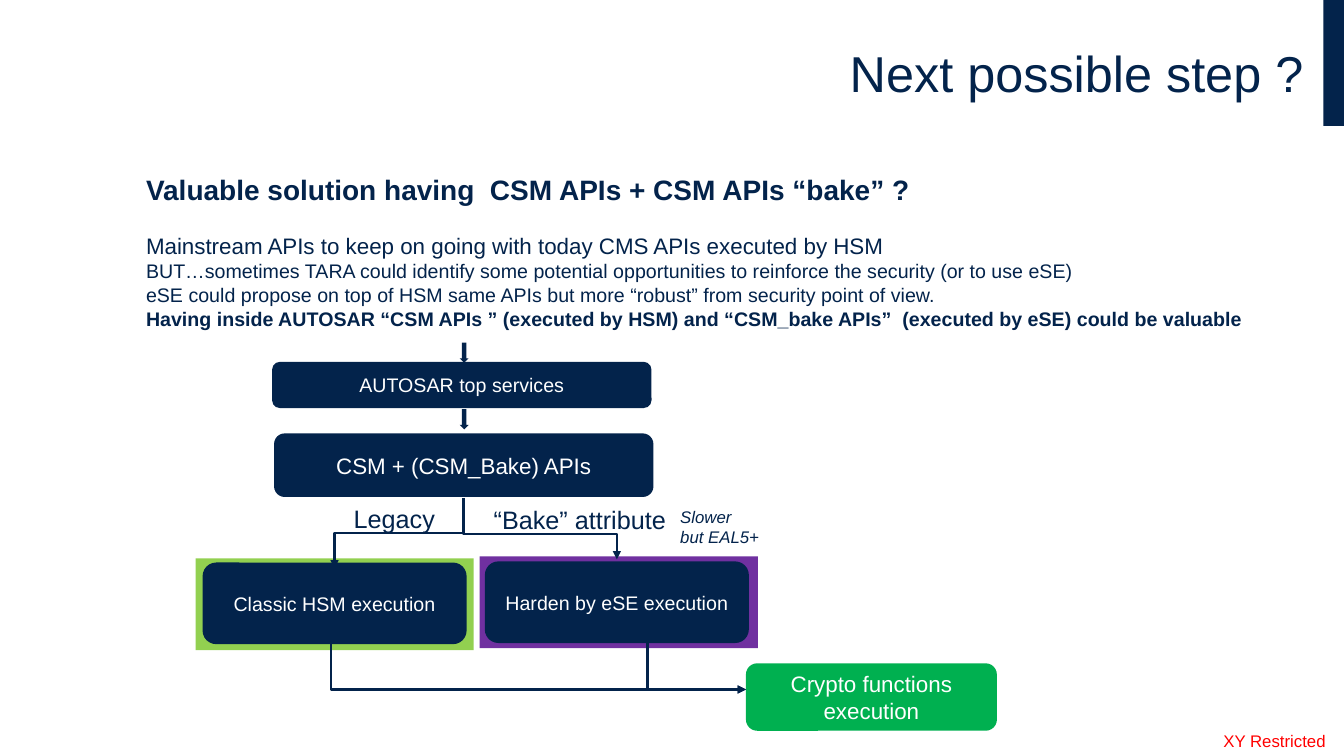
from pptx import Presentation
from pptx.dml.color import RGBColor
from pptx.enum import dml, shapes, text
from pptx.oxml import parse_xml
from pptx.oxml.ns import nsdecls
from pptx.util import Pt

NAVY, WHITE, RED = "03234B", "FFFFFF", "FF0000"
LIME, GREEN, PURPLE = "92D050", "00B050", "7030A0"
SHAPE, ALIGN = shapes.MSO_SHAPE, text.PP_ALIGN


def rgb(value):
    return RGBColor.from_string(value)


def add_run(p, words, size, color=NAVY, bold=False, italic=False):
    r = p.add_run()
    r.text = words
    r.font.name, r.font.size = "Arial", Pt(size)
    r.font.bold, r.font.italic = bold, italic
    r.font.color.rgb = rgb(color)


def add_text(s, box, lines, align=ALIGN.LEFT, anchor=text.MSO_ANCHOR.TOP,
             wrap=True, inset=(7.2, 3.6)):
    """Each line is (words, size, run options, space before)."""
    tf = s.shapes.add_textbox(*map(Pt, box)).text_frame
    tf.word_wrap, tf.vertical_anchor = wrap, anchor
    tf.margin_left = tf.margin_right = Pt(inset[0])
    tf.margin_top = tf.margin_bottom = Pt(inset[1])
    for i, (words, size, options, space) in enumerate(lines):
        p = tf.add_paragraph() if i else tf.paragraphs[0]
        p.alignment = align
        if space:
            p.space_before = Pt(space)
        add_run(p, words, size, **options)


def add_block(s, kind, box, fill, label="", size=14):
    sp = s.shapes.add_shape(kind, *map(Pt, box))
    sp.shadow.inherit = False
    sp.fill.solid()
    sp.fill.fore_color.rgb = rgb(fill)
    sp.line.fill.background()
    if label:
        tf = sp.text_frame
        tf.word_wrap, tf.vertical_anchor = True, text.MSO_ANCHOR.MIDDLE
        p = tf.paragraphs[0]
        p.alignment = ALIGN.CENTER
        add_run(p, label, size, WHITE)


def add_elbow(s, start, end, vertical=False, single_bend=False):
    """Elbow arrow; a vertical start is a horizontal elbow turned a quarter."""
    (x1, y1), (x2, y2) = start, end
    rightward = x2 > x1
    if vertical:
        cx, cy = (x1 + x2) / 2, (y1 + y2) / 2
        half_w, half_h = abs(y2 - y1) / 2, abs(x2 - x1) / 2
        side = half_w if rightward else -half_w
        x1, y1, x2, y2 = cx + side, cy - half_h, cx - side, cy + half_h
    cn = s.shapes.add_connector(shapes.MSO_CONNECTOR.ELBOW,
                                Pt(x1), Pt(y1), Pt(x2), Pt(y2))
    cn.line.color.rgb = rgb(NAVY)
    cn.line.width = Pt(1.75)
    cn.line.dash_style = dml.MSO_LINE.SOLID
    props = cn._element.spPr
    if vertical:
        props.xfrm.set("rot", str((270 if rightward else 90) * 60000))
    if single_bend:
        props.prstGeom.set("prst", "bentConnector2")
    props.ln.append(parse_xml(f'<a:tailEnd {nsdecls("a")} type="triangle"/>'))
    props.append(parse_xml(f'<a:effectLst {nsdecls("a")}/>'))


def main():
    prs = Presentation()
    prs.slide_width, prs.slide_height = Pt(960), Pt(540)
    s = prs.slides.add_slide(prs.slide_layouts[6])
    plain, bold, italic = {}, {"bold": True}, {"italic": True}
    middle = text.MSO_ANCHOR.MIDDLE

    # Page frame and title
    add_block(s, SHAPE.RECTANGLE, (945.36, 0, 14.64, 90), NAVY)
    add_text(s, (862, 517.7, 85, 22.3),
             [("XY Restricted", 12, {"color": RED}, 0)],
             ALIGN.RIGHT, middle, wrap=False, inset=(0, 0))
    add_text(s, (23.8, 0, 914.4, 103), [("Next possible step ?", 36, plain, 0)],
             ALIGN.RIGHT, middle)

    # Argument
    add_text(s, (97.2, 120, 840, 120), [
        ("Valuable solution having  CSM APIs + CSM APIs “bake” ?", 20, bold, 0),
        ("Mainstream APIs to keep on going with today CMS APIs executed by HSM",
         16, plain, 18.5),
        ("BUT…sometimes TARA could identify some potential opportunities to "
         "reinforce the security (or to use eSE)", 14, plain, 0),
        ("eSE could propose on top of HSM same APIs but more “robust” from "
         "security point of view.", 14, plain, 0),
        ("Having inside AUTOSAR “CSM APIs ” (executed by HSM) and “CSM_bake "
         "APIs”  (executed by eSE) could be valuable", 14, bold, 0),
    ])

    # Service layers, with the arrows leading into them
    rounded = SHAPE.ROUNDED_RECTANGLE
    add_block(s, rounded, (194.4, 258.5, 271, 33), NAVY, "AUTOSAR top services")
    add_block(s, rounded, (195.8, 309.6, 271, 45.4), NAVY,
              "CSM + (CSM_Bake) APIs", 16)
    for top in (244.8, 292.3):
        add_block(s, SHAPE.DOWN_ARROW, (328.3, top, 6.5, 14.4), NAVY)

    # Execution engines in coloured frames
    crypto_in = (532.8, 492.5)
    add_block(s, rounded, (532.8, 473.8, 179.3, 48.2), GREEN,
              "Crypto functions execution", 16)
    for left, top, color in ((139.7, 398.9, LIME), (342.7, 397.4, PURPLE)):
        add_block(s, SHAPE.RECTANGLE, (left, top, 198.7, 65.5), color)
    add_elbow(s, (392.4, 451.4), crypto_in)
    for left, top, label in ((144.7, 401.8, "Classic HSM execution"),
                             (346.3, 401, "Harden by eSE execution")):
        add_block(s, rounded, (left, top, 188.6, 58.3), NAVY, label)

    # Routing arrows
    add_elbow(s, (236.2, 447.8), crypto_in, vertical=True, single_bend=True)
    add_elbow(s, (331.2, 355.7), (239, 406.1), vertical=True)
    add_elbow(s, (331.2, 363.6), (440.6, 399.6), vertical=True)

    # Route labels
    add_text(s, (345.6, 356.4, 144, 28.8), [("“Bake” attribute", 18, plain, 0)],
             wrap=False)
    add_text(s, (245.5, 355.7, 73.4, 28.8), [("Legacy", 18, plain, 0)], wrap=False)
    add_text(s, (478.8, 358.6, 74.9, 36),
             [("Slower", 12, italic, 0), ("but EAL5+", 12, italic, 0)], wrap=False)

    prs.save("out.pptx")


if __name__ == "__main__":
    main()
